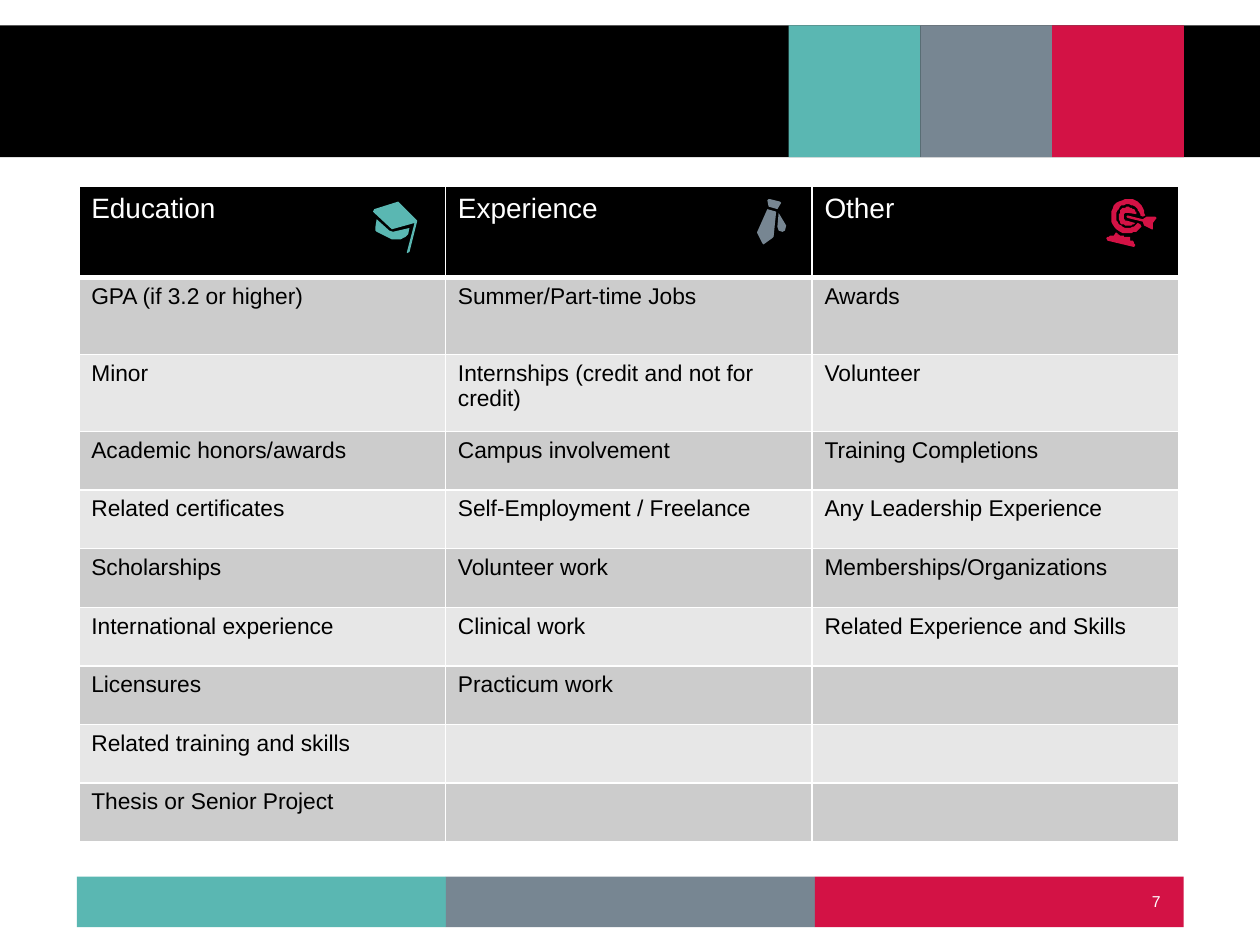
from dataclasses import dataclass
from itertools import zip_longest

from lxml import etree
from pptx import Presentation
from pptx.dml.color import RGBColor
from pptx.enum import shapes, text
from pptx.oxml import ns
from pptx.util import Pt


@dataclass(frozen=True)
class Theme:
    teal: str = "5AB7B2"
    slate: str = "778692"
    red: str = "D31245"
    black: str = "000000"
    white: str = "FFFFFF"
    band_dark: str = "CCCCCC"
    band_light: str = "E7E7E7"
    font: str = "Arial"
    heading: int = 16
    body: int = 13
    page: int = 9


THEME = Theme()
ACCENTS = (THEME.teal, THEME.slate, THEME.red)
ICON_UNIT = 0.72

SECTIONS = {
    "Education": ["GPA (if 3.2 or higher)", "Minor", "Academic honors/awards",
                  "Related certificates", "Scholarships", "International experience",
                  "Licensures", "Related training and skills", "Thesis or Senior Project"],
    "Experience": ["Summer/Part-time Jobs", "Internships (credit and not for credit)",
                   "Campus involvement", "Self-Employment / Freelance", "Volunteer work",
                   "Clinical work", "Practicum work"],
    "Other": ["Awards", "Volunteer", "Training Completions", "Any Leadership Experience",
              "Memberships/Organizations", "Related Experience and Skills"],
}

# Outlines in hundredths of an inch: pairs are corners, sextuples are Bézier curves.
GRADUATION_CAP = [
    [(299, 174), (298, 180), (296, 184, 304, 187, 309, 189), (315, 191, 323, 190, 324, 186),
     (325, 181), (312, 184), (309, 183)],
    [(317, 161), (316, 160.5), (297, 166), (296, 168), (310, 181), (311, 182), (329, 177),
     (323, 200), (323, 201), (325, 200), (331, 176), (331, 175)],
]
NECKTIE = [
    [(618, 169), (617, 180), (618, 183), (621, 184), (623, 183), (623.5, 179)],
    [(611, 158), (610, 157.5), (609, 159), (610, 164), (617, 166), (620, 161), (619, 160)],
    [(609, 166), (601, 184), (601, 185), (605, 193), (606, 193.5), (613, 189), (614, 188),
     (616, 168)],
]
TARGET = [
    [(899, 158), (891, 157, 884, 161, 882, 168), (880, 175, 884, 183, 891, 185),
     (897, 186, 903, 184, 906, 180), (905, 178), (903, 177), (901, 180, 897, 182, 893, 181),
     (888, 180, 885, 174, 886, 169), (887, 164, 893, 161, 898, 163),
     (902, 164, 904, 167, 905, 171), (907, 172), (909, 171), (908, 165, 904, 160, 899, 158)],
    [(917, 172), (910, 172), (907, 174), (895, 171), (894, 172), (895, 173), (907, 176),
     (908, 179), (914, 182), (915, 182), (915, 177), (918, 173)],
    [(886, 184), (884, 187), (882, 187), (881, 187, 879, 188, 878, 189), (879, 191),
     (900, 196), (901, 195), (901, 194, 900, 192, 899, 191), (897, 191), (897, 188),
     (895, 188, 893, 188, 891, 187), (889, 187, 887, 186, 886, 184)],
    [(897, 165), (893, 163, 889, 166, 888, 170), (887, 174, 889, 178, 893, 179),
     (896, 180, 899, 179, 901, 177), (894, 175), (892, 174, 892, 173, 892, 171),
     (892, 169, 894, 168, 896, 169), (902, 170), (902, 168, 900, 165, 897, 165)],
]


def paint(shape, color):
    shape.fill.solid()
    shape.fill.fore_color.rgb = RGBColor.from_string(color)
    shape.line.fill.background()
    shape.shadow.inherit = False


def add_block(slide, left, top, width, height, color):
    block = slide.shapes.add_shape(
        shapes.MSO_SHAPE.RECTANGLE, Pt(left), Pt(top), Pt(width), Pt(height))
    paint(block, color)


def write(frame, wording, size, color, **paragraph_format):
    paragraph = frame.paragraphs[0]
    for name, value in paragraph_format.items():
        setattr(paragraph, name, value)
    run = paragraph.add_run()
    run.text = wording
    for name, value in {"name": THEME.font, "size": Pt(size), "bold": False}.items():
        setattr(run.font, name, value)
    run.font.color.rgb = RGBColor.from_string(color)


def set_borders(cell, bottom_width):
    properties = cell._tc.get_or_add_tcPr()
    widths = {"a:lnL": 1, "a:lnR": 1, "a:lnT": 1, "a:lnB": bottom_width}
    for position, (tag, width) in enumerate(widths.items()):
        border = etree.Element(ns.qn(tag), w=str(Pt(width)))
        fill = etree.SubElement(border, ns.qn("a:solidFill"))
        etree.SubElement(fill, ns.qn("a:srgbClr"), val=THEME.white)
        properties.insert(position, border)


def add_sections(slide):
    heights = [52, 44, 44] + [33.5] * 7
    table = slide.shapes.add_table(
        len(heights), len(SECTIONS), Pt(45), Pt(106.6), Pt(628.5), Pt(sum(heights))).table
    for column in table.columns:
        column.width = Pt(209.5)
    rows = [tuple(SECTIONS), *zip_longest(*SECTIONS.values(), fillvalue="")]
    for index, (entries, height) in enumerate(zip(rows, heights)):
        table.rows[index].height = Pt(height)
        size, color, fill, bottom = THEME.body, THEME.black, THEME.band_light, 1
        if index == 0:
            size, color, fill, bottom = THEME.heading, THEME.white, THEME.black, 3
        elif index % 2:
            fill = THEME.band_dark
        for cell, entry in zip(table.rows[index].cells, entries):
            cell.fill.solid()
            cell.fill.fore_color.rgb = RGBColor.from_string(fill)
            set_borders(cell, bottom)
            if entry:
                write(cell.text_frame, entry, size, color)


def curve_points(start, curve, steps=8):
    controls = [start, curve[:2], curve[2:4], curve[4:]]
    for step in range(1, steps + 1):
        t = step / steps
        weights = ((1 - t) ** 3, 3 * t * (1 - t) ** 2, 3 * t * t * (1 - t), t ** 3)
        yield tuple(sum(w * point[axis] for w, point in zip(weights, controls))
                    for axis in (0, 1))


def add_icon(slide, outlines, color):
    icon = slide.shapes.add_group_shape()
    for outline in outlines:
        points = [outline[0]]
        for segment in outline[1:]:
            points.extend([segment] if len(segment) == 2 else curve_points(points[-1], segment))
        builder = icon.shapes.build_freeform(*points[0], scale=Pt(ICON_UNIT))
        builder.add_line_segments(points[1:], close=True)
        paint(builder.convert_to_shape(), color)


def add_page_number(slide, number):
    box = slide.shapes.add_textbox(Pt(481.7), Pt(500.5), Pt(188.6), Pt(28.8))
    frame = box.text_frame
    for name, value in {"word_wrap": True, "vertical_anchor": text.MSO_ANCHOR.MIDDLE}.items():
        setattr(frame, name, value)
    write(frame, number, THEME.page, THEME.white, alignment=text.PP_ALIGN.RIGHT)


def main():
    deck = Presentation()
    deck.slide_width, deck.slide_height = Pt(720), Pt(540)
    slide = deck.slides.add_slide(deck.slide_layouts[6])
    add_block(slide, 0, 14.5, 720, 75.3, THEME.black)
    for index, color in enumerate(ACCENTS):
        add_block(slide, 44 + 210.8 * index, 501, 210.8, 28.8, color)
        add_block(slide, 450.7 + 75.3 * index, 14.5, 75.3, 75.3, color)
    add_page_number(slide, "7")
    add_sections(slide)
    for outlines, color in zip((GRADUATION_CAP, NECKTIE, TARGET), ACCENTS):
        add_icon(slide, outlines, color)
    deck.save("out.pptx")


if __name__ == "__main__":
    main()
